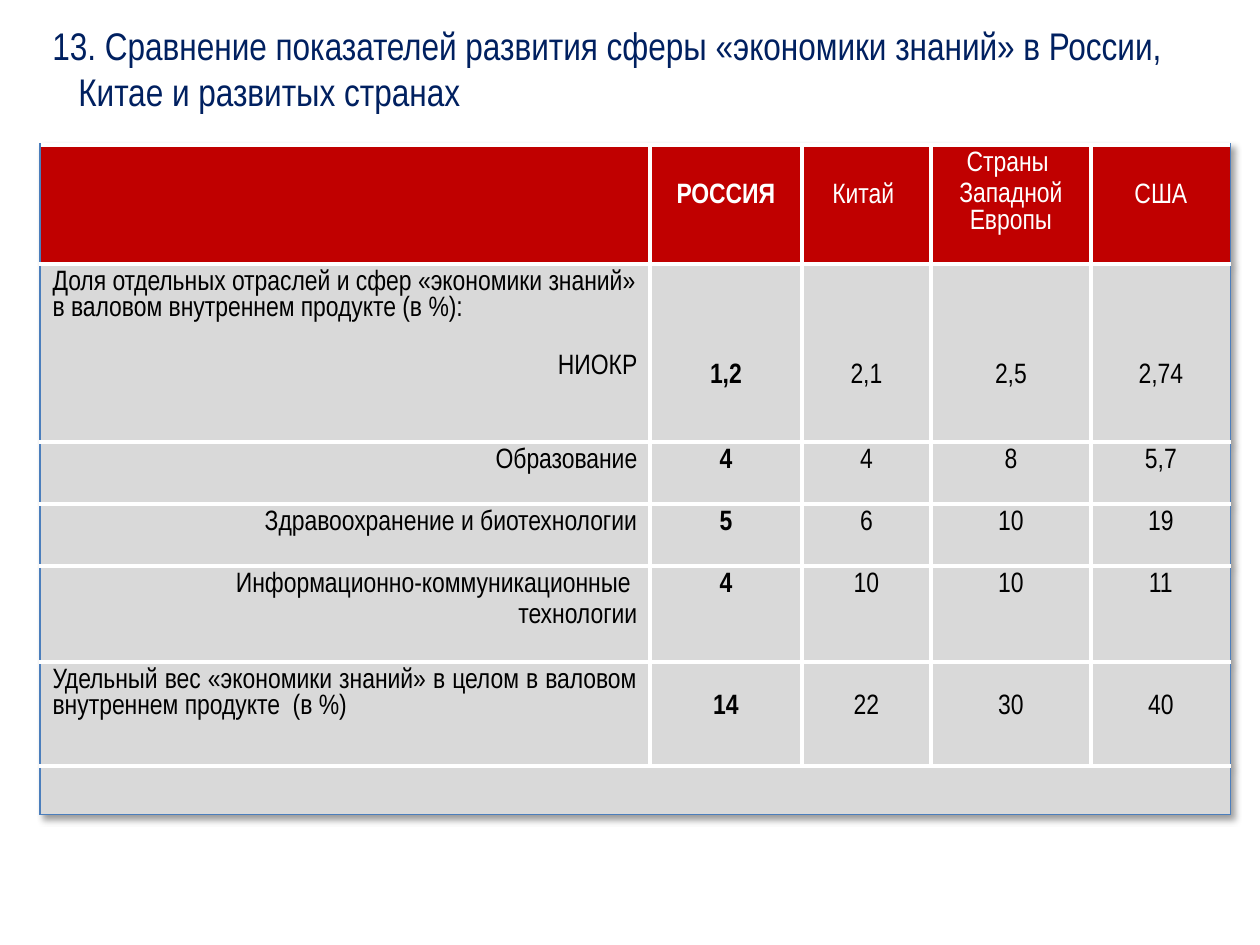
from dataclasses import dataclass

from lxml.etree import SubElement
from pptx import Presentation
from pptx.dml.color import RGBColor
from pptx.enum.text import PP_ALIGN as Align
from pptx.oxml.ns import qn
from pptx.util import Emu, Pt

PX = 914400 / 126
FONT = "Arial Narrow"
NAVY = RGBColor(0x00, 0x20, 0x60)
RED = RGBColor(0xC0, 0x00, 0x00)
GRAY = RGBColor(0xD9, 0xD9, 0xD9)
WHITE = RGBColor(0xFF, 0xFF, 0xFF)
BLACK = RGBColor(0x00, 0x00, 0x00)
BLUE = RGBColor(0x4B, 0x7E, 0xBC)

COLUMN_WIDTHS = (610, 152, 129, 160, 140)
ROW_HEIGHTS = (119, 178, 62, 62, 96, 104, 49)
LAST_ROW, LAST_COLUMN = len(ROW_HEIGHTS) - 1, len(COLUMN_WIDTHS) - 1


@dataclass(frozen=True)
class Line:
    text: str
    align: Align = Align.CENTER
    before: float = 3


@dataclass(frozen=True)
class Row:
    label: tuple[Line, ...]
    values: tuple[tuple[Line, ...], ...]
    drops: tuple[int, ...]  # extra px above the values


def px(length: int) -> Emu:
    return Emu(round(length * PX))


def value_row(label: tuple[Line, ...], values: str, drop: int = 0) -> Row:
    return Row(label, tuple((Line(value),) for value in values.split()), (drop,) * 4)


def right(*texts: str) -> tuple[Line, ...]:
    return tuple(Line(text, Align.RIGHT) for text in texts)


ROWS = (
    Row((), ((Line("РОССИЯ"),), (Line("Китай "),),
             (Line("Страны "), Line("Западной Европы")), (Line("США"),)),
        (32, 32, 0, 32)),
    value_row((Line("Доля отдельных отраслей и сфер «экономики знаний» "
                    "в валовом внутреннем продукте (в %):", Align.LEFT),
               Line("НИОКР", Align.RIGHT, 18)), "1,2 2,1 2,5 2,74", 93),
    value_row(right("Образование"), "4 4 8 5,7"),
    value_row(right("Здравоохранение и биотехнологии"), "5 6 10 19"),
    value_row(right("Информационно-коммуникационные ", "технологии"), "4 10 10 11"),
    value_row((Line("Удельный вес «экономики знаний» в целом в валовом "
                    "внутреннем продукте  (в %)", Align.JUSTIFY),), "14 22 30 40", 26),
)


def format_run(span, size: int, color: RGBColor, bold: bool = False) -> None:
    span.font.name = FONT
    span.font.size = Pt(size)
    span.font.bold = bold
    span.font.color.rgb = color


def add_title(page) -> None:
    box = page.shapes.add_textbox(px(40), px(16), px(1181), px(106))
    box.text_frame.word_wrap = True
    box.text_frame.text = ("13. Сравнение показателей развития сферы «экономики знаний» "
                           "в России, Китае и развитых странах")
    para = box.text_frame.paragraphs[0]
    hanging = para._p.get_or_add_pPr()
    hanging.set("marL", str(px(26)))
    hanging.set("indent", str(-px(26)))
    format_run(para.runs[0], 22, NAVY)


def set_borders(cell, outer_sides: set[str]) -> None:
    """White grid lines, thin blue on the sides at the table's outer edge."""
    properties = cell._tc.get_or_add_tcPr()
    for side in "LRTB":
        width, color = (0.75, BLUE) if side in outer_sides else (2.25, WHITE)
        line = SubElement(properties, qn(f"a:ln{side}"), w=str(Pt(width)))
        SubElement(SubElement(line, qn("a:solidFill")), qn("a:srgbClr"), val=str(color))


def write_lines(cell, lines: tuple[Line, ...], color: RGBColor, bold: bool) -> None:
    frame = cell.text_frame
    frame.text = "\n".join(line.text for line in lines)
    for index, (para, line) in enumerate(zip(frame.paragraphs, lines)):
        para.alignment = line.align
        para.line_spacing = 1.0
        para.space_before = Pt(line.before if index else 0)
        format_run(para.runs[0], 16, color, bold)


def add_shadow(table) -> None:
    effects = SubElement(table._tbl.tblPr, qn("a:effectLst"))
    table._tbl.tblPr.insert(0, effects)
    shadow = SubElement(effects, qn("a:outerShdw"), blurRad="50800", dist="38100",
                        dir="2700000", algn="tl", rotWithShape="0")
    color = SubElement(shadow, qn("a:srgbClr"), val=str(BLACK))
    SubElement(color, qn("a:alpha"), val="40000")


def add_comparison(page) -> None:
    table = page.shapes.add_table(
        len(ROW_HEIGHTS), len(COLUMN_WIDTHS), px(40), px(145),
        px(sum(COLUMN_WIDTHS)), px(sum(ROW_HEIGHTS))).table
    table.first_row = table.horz_banding = False
    add_shadow(table)
    for column, width in zip(table.columns, COLUMN_WIDTHS):
        column.width = px(width)
    for row, height in zip(table.rows, ROW_HEIGHTS):
        row.height = px(height)
    table.cell(LAST_ROW, 0).merge(table.cell(LAST_ROW, LAST_COLUMN))

    for r in range(LAST_ROW + 1):
        for c in range(LAST_COLUMN + 1):
            cell = table.cell(r, c)
            at_edge = {"L": c == 0, "R": c == LAST_COLUMN or cell.is_merge_origin,
                       "B": r == LAST_ROW}
            set_borders(cell, {side for side, outer in at_edge.items() if outer})
            cell.fill.solid()
            cell.fill.fore_color.rgb = GRAY if r else RED
            cell.margin_top, cell.margin_bottom = px(6), 0

    for r, row in enumerate(ROWS):
        color = BLACK if r else WHITE
        if row.label:
            write_lines(table.cell(r, 0), row.label, color, False)
        for c, (lines, drop) in enumerate(zip(row.values, row.drops), start=1):
            cell = table.cell(r, c)
            cell.margin_top = px(6 + drop)
            write_lines(cell, lines, color, bold=c == 1)


def main() -> None:
    deck = Presentation()
    deck.slide_width, deck.slide_height = px(1260), px(945)
    page = deck.slides.add_slide(deck.slide_layouts[6])
    add_title(page)
    add_comparison(page)
    deck.save("out.pptx")


if __name__ == "__main__":
    main()
